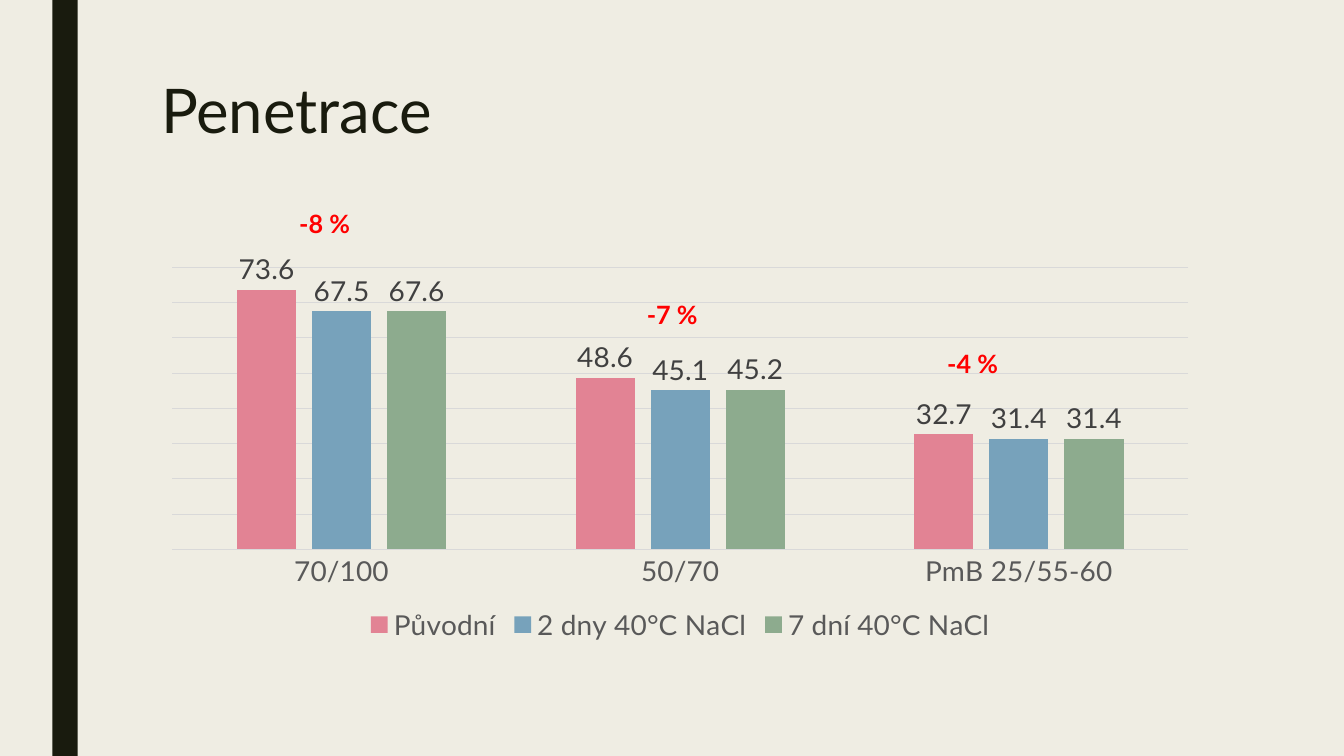
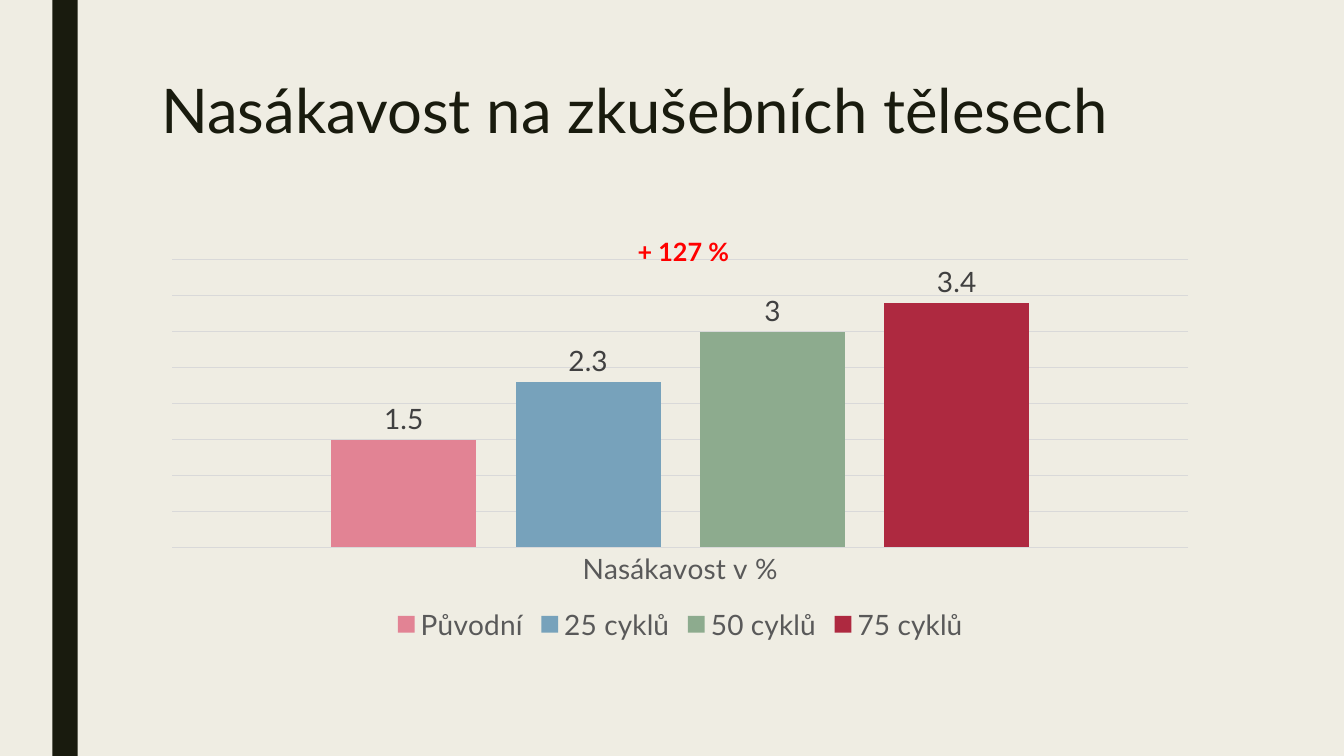
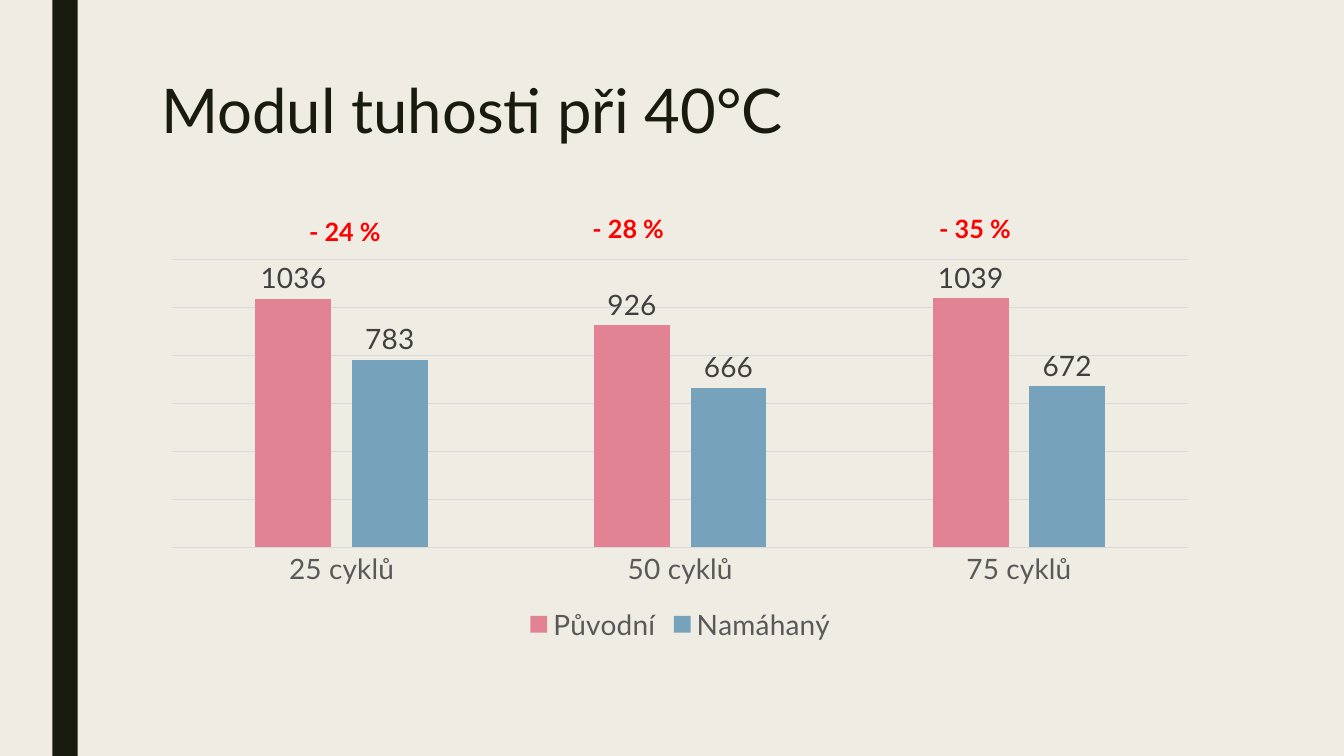
from pptx import Presentation
from pptx.chart.data import CategoryChartData
from pptx.dml.color import RGBColor
from pptx.enum.chart import (XL_CHART_TYPE, XL_LABEL_POSITION,
                             XL_LEGEND_POSITION, XL_TICK_MARK)
from pptx.enum.shapes import MSO_SHAPE
from pptx.enum.text import MSO_ANCHOR
from pptx.util import Cm, Pt

COLUMN = XL_CHART_TYPE.COLUMN_CLUSTERED
ABOVE = XL_LABEL_POSITION.OUTSIDE_END
BOTTOM = XL_LEGEND_POSITION.BOTTOM
NO_TICK = XL_TICK_MARK.NONE
RECT = MSO_SHAPE.RECTANGLE
TOP = MSO_ANCHOR.TOP

# Content: scale is (top, step); a note is (text, left, top) in cm
SLIDES = [
    {"title": "Penetrace",
     "cats": ["70/100", "50/70", "PmB 25/55-60"],
     "series": [("Původní", [73.6, 48.6, 32.7]),
                ("2 dny 40°C NaCl", [67.5, 45.1, 31.4]),
                ("7 dní 40°C NaCl", [67.6, 45.2, 31.4])],
     "scale": (80, 10),
     "width": 2.21,
     "notes": [("-8 %", 7.29, 5.13), ("-7 %", 16.05, 7.42),
               ("-4 %", 23.62, 8.66)]},
    {"title": "Nasákavost na zkušebních tělesech",
     "cats": ["Nasákavost v %"],
     "series": [("Původní", [1.5]), ("25 cyklů", [2.3]),
                ("50 cyklů", [3]), ("75 cyklů", [3.4])],
     "scale": (4, 0.5),
     "width": 3.63,
     "notes": [("+ 127 %", 15.82, 5.84)]},
    {"title": "Modul tuhosti při 40°C",
     "cats": ["25 cyklů", "50 cyklů", "75 cyklů"],
     "series": [("Původní", [1036, 926, 1039]),
                ("Namáhaný", [783, 666, 672])],
     "scale": (1200, 200),
     "width": 3.63,
     "notes": [("- 24 %", 7.54, 5.33), ("- 28 %", 14.68, 5.26),
               ("- 35 %", 23.42, 5.26)]},
]


class Theme:
    font = "Lato"
    paper, ink, note = "EFEDE3", "191B0E", "FF0000"
    axis, label, grid = "595959", "404040", "D9D9D9"
    bars = ["E28394", "77A2BB", "8DAB8E", "AE2940"]
    title_size, chart_size, note_size = 44, 20, 18


# Page measures in cm
WIDE, HIGH = 33.87, 19.05
LEFT, SPAN = 3.81, 26.67
BAND = (1.32, 0, 0.64, HIGH)
TITLE = (LEFT, 1.91, SPAN, 4.11)
CHART = (LEFT, 6.35, SPAN, 9.96)
NOTE_HIGH = 1.02


def place(box):
    return [Cm(n) for n in box]


def paint(fill, color):
    fill.solid()
    fill.fore_color.rgb = RGBColor.from_string(color)


def style(font, size, color, bold=False):
    font.name = Theme.font
    font.size = Pt(size)
    font.bold = bold
    font.color.rgb = RGBColor.from_string(color)


def rule(line):
    line.color.rgb = RGBColor.from_string(Theme.grid)
    line.width = Pt(0.75)


def add_text(slide, box, text, size, color, bold=False, space=None):
    frame = slide.shapes.add_textbox(*place(box)).text_frame
    frame.word_wrap = True
    frame.vertical_anchor = TOP
    para = frame.paragraphs[0]
    para.line_spacing = space
    run = para.add_run()
    run.text = text
    style(run.font, size, color, bold)


def add_band(slide):
    band = slide.shapes.add_shape(RECT, *place(BAND))
    band.shadow.inherit = False
    paint(band.fill, Theme.ink)
    band.line.fill.background()


def add_bars(slide, page):
    data = CategoryChartData()
    data.categories = page["cats"]
    for name, vals in page["series"]:
        data.add_series(name, vals)
    chart = slide.shapes.add_chart(COLUMN, *place(CHART), data).chart
    style(chart.font, Theme.chart_size, Theme.axis)
    chart.has_title = False
    chart.has_legend = True
    chart.legend.position = BOTTOM
    chart.legend.include_in_layout = False

    # Axes
    cat, val = chart.category_axis, chart.value_axis
    cat.major_tick_mark = cat.minor_tick_mark = NO_TICK
    rule(cat.format.line)
    val.visible = False
    val.minimum_scale = 0
    val.maximum_scale, val.major_unit = page["scale"]
    val.has_major_gridlines = True
    rule(val.major_gridlines.format.line)

    # Columns
    plot = chart.plots[0]
    plot.gap_width, plot.overlap = 219, -27
    plot.vary_by_categories = False
    for series, color in zip(plot.series, Theme.bars):
        paint(series.format.fill, color)
        series.invert_if_negative = False
        labels = series.data_labels
        labels.show_value = True
        labels.position = ABOVE
        style(labels.font, Theme.chart_size, Theme.label)


def main():
    deck = Presentation()
    deck.slide_width, deck.slide_height = Cm(WIDE), Cm(HIGH)
    paint(deck.slide_master.background.fill, Theme.paper)
    blank = deck.slide_layouts[6]
    for page in SLIDES:
        slide = deck.slides.add_slide(blank)
        add_band(slide)
        add_text(slide, TITLE, page["title"], Theme.title_size, Theme.ink,
                 space=0.89)
        add_bars(slide, page)
        for text, left, top in page["notes"]:
            add_text(slide, (left, top, page["width"], NOTE_HIGH), text,
                     Theme.note_size, Theme.note, bold=True)
    deck.save("out.pptx")


if __name__ == "__main__":
    main()
